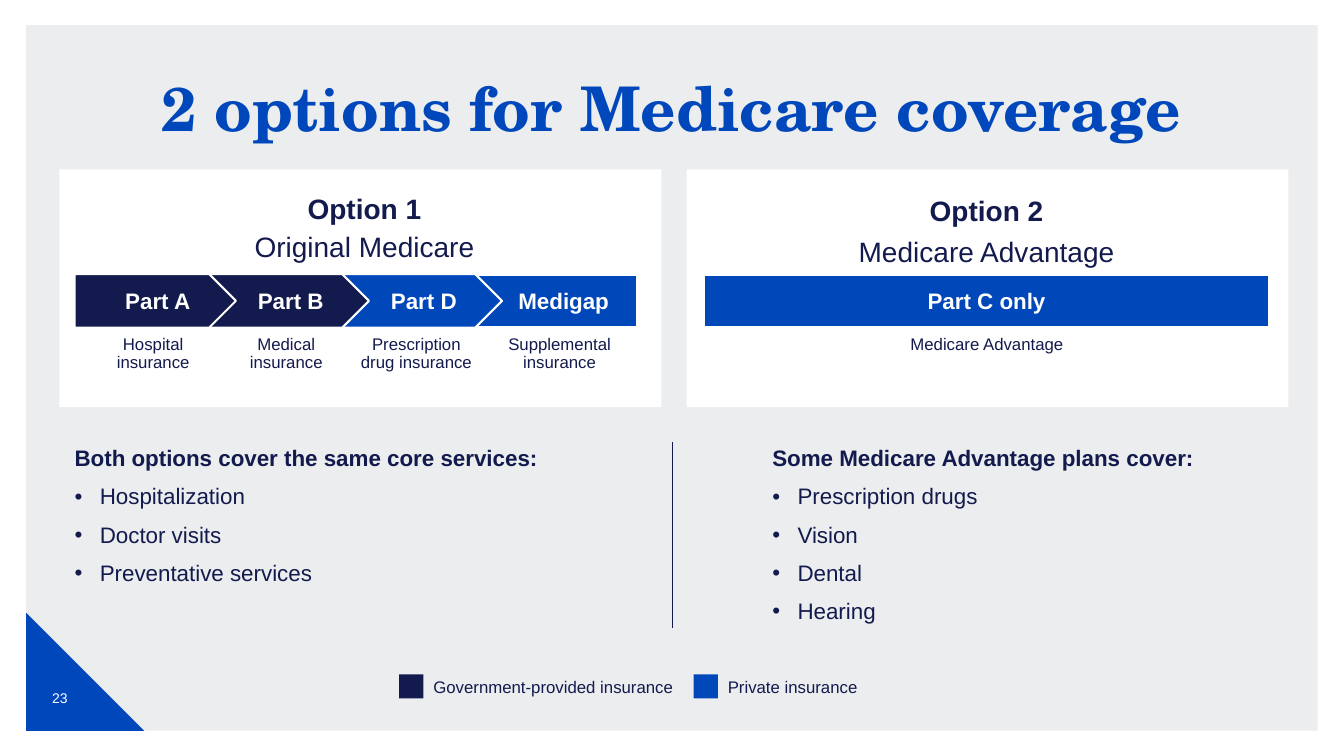
from pptx import Presentation
from pptx.util import Inches, Pt
from pptx.dml.color import RGBColor
from pptx.enum.shapes import MSO_SHAPE as Kind, MSO_CONNECTOR as Link
from pptx.enum.text import PP_ALIGN as Align, MSO_ANCHOR as Anchor
from pptx.oxml.ns import qn
from lxml.etree import SubElement

NAVY, BLUE, DEEP, WHITE, GRAY = "131A4D", "0047BA", "0047BB", "FFFFFF", "ECEDEE"
TITLE = "2 options for Medicare coverage"
CARDS = [0.59, 6.81]
HEADS = [
    (1.16, 1.85, 1.0, ["Option 1", "Original Medicare"]),
    (7.33, 1.84, 1.1, ["Option 2", "Medicare Advantage"]),
]
PARTS = [
    ("Medigap", Kind.RECTANGLE, 4.38, 1.94, BLUE, 2.25, 0.58),
    ("Part D", Kind.PENTAGON, 3.38, 1.6, BLUE, 1.5, 0.28),
    ("Part B", Kind.PENTAGON, 2.06, 1.6, NAVY, 1.5, 0.28),
    ("Part A", Kind.PENTAGON, 0.74, 1.6, NAVY, 1.5, 0.28),
    ("Part C only", Kind.RECTANGLE, 6.98, 5.61, BLUE, 2.25, 0.1),
]
NOTES = [
    ("Hospital\vinsurance", 0.97, 1.1),
    ("Medical\vinsurance", 2.34, 1.0),
    ("Prescription\vdrug insurance", 3.47, 1.32),
    ("Supplemental insurance", 4.79, 1.52),
    ("Medicare Advantage", 7.66, 4.26),
]
LISTS = [
    (0.74, 5.53, ["Both options cover the same core services:",
                  "Hospitalization", "Doctor visits", "Preventative services"]),
    (7.66, 5.11, ["Some Medicare Advantage plans cover:",
                  "Prescription drugs", "Vision", "Dental", "Hearing"]),
]
KEYS = [
    ("Government-provided insurance", 3.96, 2.6, NAVY),
    ("Private insurance", 6.88, 1.53, BLUE),
]

deck = Presentation()
deck.slide_width, deck.slide_height = Inches(13.33), Inches(7.5)
slide = deck.slides.add_slide(deck.slide_layouts[6])
shapes = slide.shapes


def color(code):
    return RGBColor.from_string(code)


def apply(item, **values):
    for name, value in values.items():
        setattr(item, name, value)


def bullet(para):
    props = para._p.get_or_add_pPr()
    props.set("marL", str(Inches(0.25)))
    props.set("indent", str(-Inches(0.25)))
    SubElement(props, qn("a:buFont")).set("typeface", "Arial")
    SubElement(props, qn("a:buChar")).set("char", "•")


def write(frame, lines, size, ink=NAVY, bold=False, face="Arial",
          align=Align.CENTER, lead=1.0, gap=0, dots=False):
    for i, line in enumerate(lines):
        para = frame.paragraphs[0] if i == 0 else frame.add_paragraph()
        para.text = line
        apply(para, alignment=align, line_spacing=lead,
              space_before=Pt(gap if i else 0))
        if dots and i:
            bullet(para)
        apply(para.font, name=face, size=Pt(size), bold=bold and i == 0)
        para.font.color.rgb = color(ink)


def label(spot, lines, size, side=0, anchor=Anchor.TOP, wrap=True, **style):
    frame = shapes.add_textbox(*map(Inches, spot)).text_frame
    apply(frame, word_wrap=wrap, vertical_anchor=anchor,
          margin_left=Inches(side), margin_right=Inches(side))
    write(frame, lines, size, **style)


def block(kind, spot, fill, edge=0):
    shape = shapes.add_shape(kind, *map(Inches, spot))
    shape.shadow.inherit = False
    shape.fill.solid()
    shape.fill.fore_color.rgb = color(fill)
    if edge:
        shape.line.color.rgb = color(WHITE)
        shape.line.width = Pt(edge)
    else:
        shape.line.fill.background()
    return shape


block(Kind.RECTANGLE, (0.26, 0.25, 12.81, 7), GRAY)
block(Kind.RIGHT_TRIANGLE, (0.26, 6.08, 1.17, 1.17), DEEP)
label((0.32, 6.63, 0.55, 0.58), ["23"], 10, 0.1, Anchor.MIDDLE, ink=WHITE)
for left in CARDS:
    block(Kind.RECTANGLE, (left, 1.68, 5.97, 2.36), WHITE)
label((1.35, 0.73, 10.62, 0.67), [TITLE], 44, ink=DEEP, bold=True,
      face="TeX Gyre Schola", lead=0.9)

for left, wide, lines in LISTS:
    label((left, 4.39, wide, 2), lines, 16, bold=True, align=Align.LEFT,
          lead=0.9, gap=10, dots=True)

rule = shapes.add_connector(Link.STRAIGHT, *map(Inches, (6.67, 4.39, 6.67, 6.23)))
rule.line.color.rgb = color(NAVY)
rule.line.width = Pt(1)
SubElement(rule._element.spPr, qn("a:effectLst"))

for left, top, lead, lines in HEADS:
    label((left, top, 4.91, 0.83), lines, 20, bold=True, lead=lead, gap=3)

for name, kind, left, wide, fill, edge, inset in PARTS:
    part = block(kind, (left, 2.72, wide, 0.53), fill, edge)
    apply(part.text_frame, vertical_anchor=Anchor.MIDDLE, word_wrap=True,
          margin_left=Inches(inset))
    write(part.text_frame, [name], 16, ink=WHITE, bold=True)

for text, left, wide in NOTES:
    label((left, 3.28, wide, 0.64), [text], 12, lead=0.9)

for text, left, wide, fill in KEYS:
    block(Kind.RECTANGLE, (left, 6.69, 0.24, 0.24), fill)
    label((left + 0.24, 6.66, wide, 0.3), [text], 12, 0.1, wrap=False,
          align=Align.LEFT)

deck.save("out.pptx")
